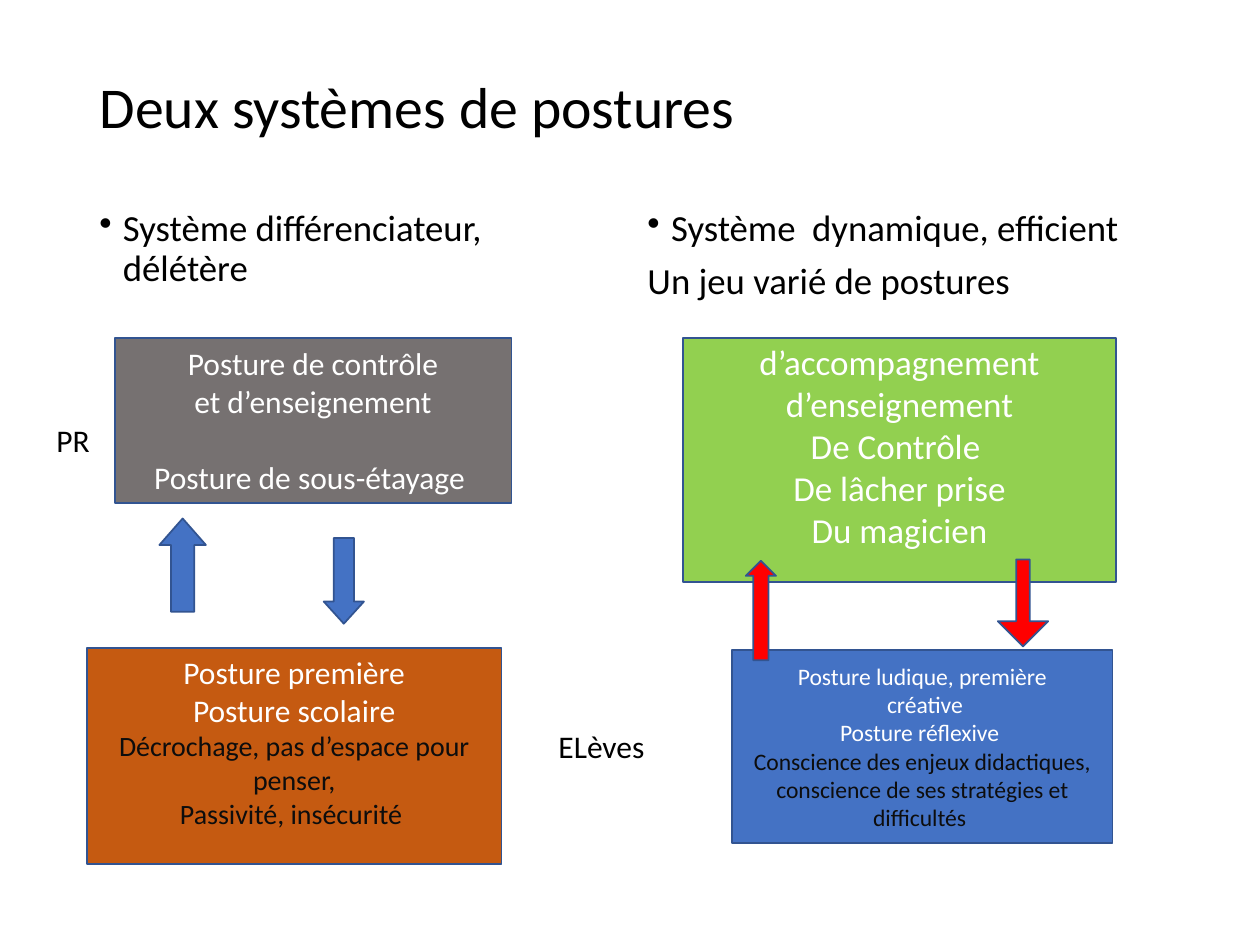
import dataclasses

import lxml.etree
import pptx
import pptx.dml.color
import pptx.enum.shapes
import pptx.enum.text
import pptx.oxml.ns
import pptx.util

Pt = pptx.util.Pt
ALIGN = pptx.enum.text.PP_ALIGN
ANCHOR = pptx.enum.text.MSO_ANCHOR
SHAPE = pptx.enum.shapes.MSO_SHAPE


@dataclasses.dataclass(frozen=True)
class Theme:
    font: str = "Calibri"
    ink: str = "000000"
    soft_ink: str = "0D0D0D"
    light: str = "FFFFFF"
    outline: str = "325491"
    grey: str = "767171"
    rust: str = "C55A11"
    green: str = "92D050"
    blue: str = "4472C4"
    red: str = "FF0000"
    title: float = 33
    heading: float = 21
    large: float = 20
    body: float = 18
    detail: float = 16
    small: float = 13.5


THEME = Theme()


def rgb(colour):
    return pptx.dml.color.RGBColor.from_string(colour)


def add_bullet(paragraph, indent=13.5):
    properties = paragraph._p.get_or_add_pPr()
    properties.set("marL", str(Pt(indent)))
    properties.set("indent", str(-Pt(indent)))
    bullet = lxml.etree.SubElement(properties, pptx.oxml.ns.qn("a:buChar"))
    bullet.set("char", "•")


def write(paragraph, text, size=THEME.body, colour=THEME.ink, align=ALIGN.LEFT,
          spacing=1.0, before=0, bullet=False):
    paragraph.alignment = align
    paragraph.line_spacing = spacing
    paragraph.space_before = Pt(before)
    if bullet:
        add_bullet(paragraph)
    run = paragraph.add_run()
    run.text = text
    run.font.name = THEME.font
    run.font.size = Pt(size)
    run.font.color.rgb = rgb(colour)


def write_lines(frame, lines, **common):
    for index, (text, own) in enumerate(lines):
        paragraph = frame.add_paragraph() if index else frame.paragraphs[0]
        write(paragraph, text, **{**common, **own})


def place(origin, box):
    left, top, width, height = box
    return Pt(origin[0] + left), Pt(origin[1] + top), Pt(width), Pt(height)


def add_label(slide, origin, box, lines, wrap=True, **common):
    frame = slide.shapes.add_textbox(*place(origin, box)).text_frame
    frame.word_wrap = wrap
    write_lines(frame, lines, **common)


def add_outlined(slide, kind, origin, box, fill):
    shape = slide.shapes.add_shape(kind, *place(origin, box))
    shape.shadow.inherit = False
    shape.fill.solid()
    shape.fill.fore_color.rgb = rgb(fill)
    shape.line.color.rgb = rgb(THEME.outline)
    shape.line.width = Pt(1)
    return shape


def add_postures(slide, origin, box, fill, lines, size=THEME.body, bottom=3.6):
    frame = add_outlined(slide, SHAPE.RECTANGLE, origin, box, fill).text_frame
    frame.word_wrap = True
    frame.vertical_anchor = ANCHOR.MIDDLE
    frame.margin_bottom = Pt(bottom)
    write_lines(frame, lines, size=size, colour=THEME.light, align=ALIGN.CENTER)


def add_arrow(slide, kind, origin, box, fill, shaft=0.5, head=0.5):
    arrow = add_outlined(slide, kind, origin, box, fill)
    arrow.adjustments[0] = shaft
    arrow.adjustments[1] = head


def add_title(slide, box, text):
    title = slide.shapes.title
    title.left, title.top, title.width, title.height = place((0, 0), box)
    title.text_frame.vertical_anchor = ANCHOR.MIDDLE
    write(title.text_frame.paragraphs[0], text, size=THEME.title, spacing=0.9)


def add_system(slide, origin, heading, teacher, pupils, up, down, label):
    add_label(slide, origin, size=THEME.heading, spacing=0.9, before=7.5, **heading)
    for postures in (teacher, pupils):
        add_postures(slide, origin, **postures)
    add_arrow(slide, SHAPE.UP_ARROW, origin, **up)
    add_arrow(slide, SHAPE.DOWN_ARROW, origin, **down)
    add_label(slide, origin, **label)


def main():
    deck = pptx.Presentation()
    deck.slide_width, deck.slide_height = Pt(720), Pt(540)
    slide = deck.slides.add_slide(deck.slide_layouts[5])
    add_title(slide, (49.7, 28.8, 620.6, 68.4), "Deux systèmes de postures")

    detail = {"size": THEME.detail, "colour": THEME.soft_ink}
    add_system(
        slide, (25, 116),
        heading={"box": (24.7, 0.6, 288, 70), "lines": [
            ("Système différenciateur, délétère", {"bullet": True})]},
        teacher={"box": (40.5, 77, 226.8, 94.3), "fill": THEME.grey, "lines": [
            ("Posture de contrôle", {}),
            ("et d’enseignement", {}),
            ("Posture de sous-étayage ", {"before": 22})]},
        pupils={"box": (24.7, 254.1, 236.9, 123.8), "fill": THEME.rust, "bottom": 20, "lines": [
            ("Posture première", {}),
            ("Posture scolaire", {}),
            ("Décrochage, pas d’espace pour penser,", detail),
            ("Passivité, insécurité ", detail)]},
        up={"box": (66.1, 180.3, 26.6, 53.3), "fill": THEME.blue, "head": 0.57},
        down={"box": (160, 191.4, 23, 49), "fill": THEME.blue, "head": 0.55},
        label={"box": (0.2, 120.9, 33.8, 28.8), "lines": [("PR", {})], "wrap": False},
    )
    add_system(
        slide, (312, 116),
        heading={"box": (50.9, 0.6, 306, 70), "lines": [
            ("Système  dynamique, efficient", {"bullet": True}),
            ("Un jeu varié de postures", {})]},
        teacher={"box": (78.2, 77, 247.7, 139.7), "fill": THEME.green,
                 "size": THEME.large, "bottom": 20, "lines": [
                     ("d’accompagnement", {}),
                     ("d’enseignement", {}),
                     ("De Contrôle ", {}),
                     ("De lâcher prise", {}),
                     ("Du magicien", {})]},
        pupils={"box": (106.3, 255.5, 217.4, 110.2), "fill": THEME.blue,
                "size": THEME.small, "lines": [
                    ("Posture ludique, première", {}),
                    (" créative", {}),
                    ("Posture réflexive ", {}),
                    ("Conscience des enjeux didactiques, conscience de ses stratégies "
                     "et difficultés ", {"colour": THEME.soft_ink})]},
        up={"box": (114.2, 204.4, 17.3, 56.9), "fill": THEME.red},
        down={"box": (258.2, 203.7, 28.8, 49.7), "fill": THEME.red, "shaft": 0.27},
        label={"box": (0, 295.8, 65.5, 28.8), "lines": [("ELèves", {})]},
    )
    deck.save("out.pptx")


if __name__ == "__main__":
    main()
